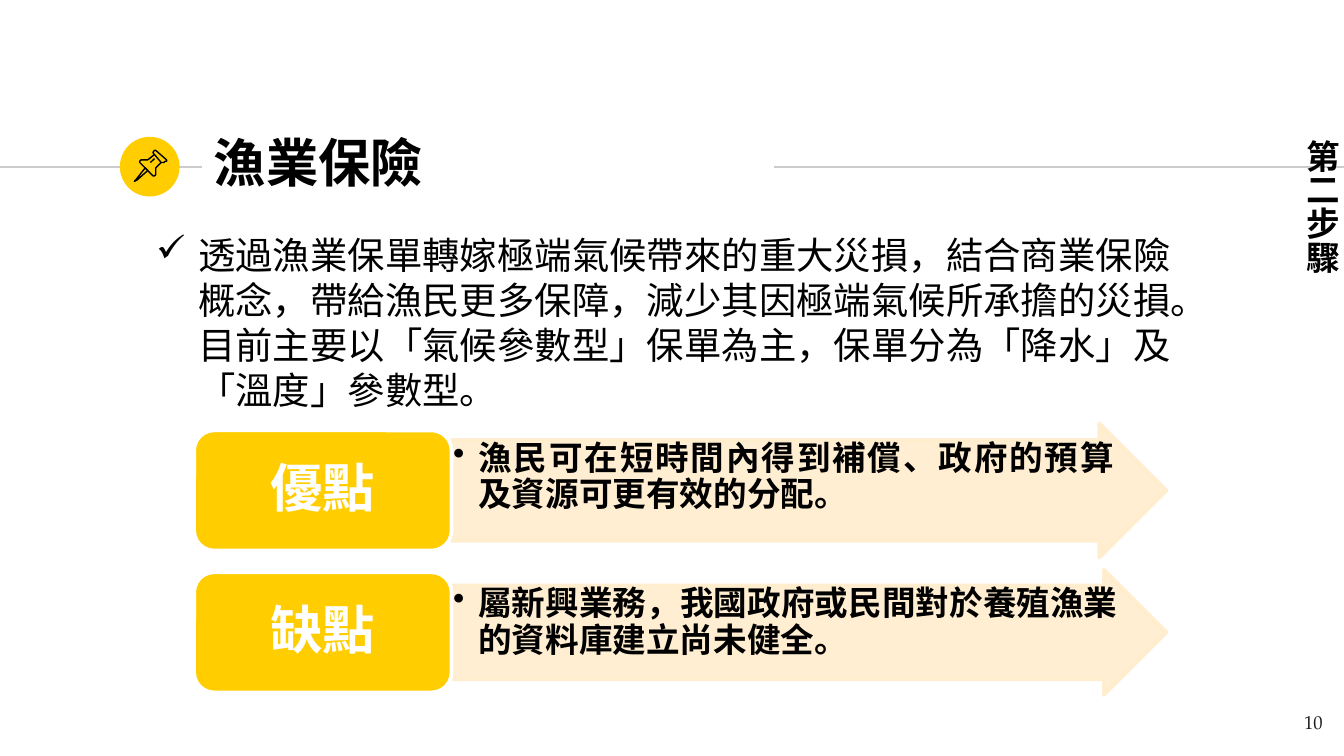
from lxml import etree
from pptx import Presentation
from pptx.dml.color import RGBColor
from pptx.enum.shapes import MSO_CONNECTOR, MSO_SHAPE
from pptx.enum.text import MSO_ANCHOR, MSO_AUTO_SIZE, PP_ALIGN
from pptx.oxml.ns import qn
from pptx.util import Pt

BLACK = RGBColor(0x00, 0x00, 0x00)
WHITE = RGBColor(0xFF, 0xFF, 0xFF)
YELLOW = RGBColor(0xFF, 0xCD, 0x00)
CREAM = RGBColor(0xFF, 0xED, 0xCC)
RULE_GRAY = RGBColor(0xCC, 0xCC, 0xCC)
NUMBER_GRAY = RGBColor(0x1D, 0x1D, 0x1B)

LEFT, CENTER = PP_ALIGN.LEFT, PP_ALIGN.CENTER
RIGHT, JUSTIFY = PP_ALIGN.RIGHT, PP_ALIGN.JUSTIFY
TOP, MIDDLE = MSO_ANCHOR.TOP, MSO_ANCHOR.MIDDLE
GROW, FIXED = MSO_AUTO_SIZE.SHAPE_TO_FIT_TEXT, MSO_AUTO_SIZE.NONE
OVAL, ROUNDED, ARROW = MSO_SHAPE.OVAL, MSO_SHAPE.ROUNDED_RECTANGLE, MSO_SHAPE.RIGHT_ARROW
STRAIGHT = MSO_CONNECTOR.STRAIGHT

FONT = "Noto Sans CJK JP"
POINT_FONT = "Noto Sans CJK SC"
NUMBER_FONT = "TeX Gyre Pagella"

BODY = (
    "透過漁業保單轉嫁極端氣候帶來的重大災損，結合商業保險概念，帶給漁民更多保障，"
    "減少其因極端氣候所承擔的災損。目前主要以「氣候參數型」保單為主，"
    "保單分為「降水」及「溫度」參數型。"
)
POINTS = [
    ("優點", "漁民可在短時間內得到補償、政府的預算及資源可更有效的分配。", 226.8, 72),
    ("缺點", "屬新興業務，我國政府或民間對於養殖漁業的資料庫建立尚未健全。", 305.3, 67),
]
PIN_UNIT = Pt(0.1)
PIN_OUTLINES = [
    ([(778, 900), (727, 965), (720, 972), (734, 965), (792, 914)], True),
    ([(828, 828), (864, 871), (878, 871), (886, 864), (893, 864), (893, 857),
      (835, 806), (828, 806), (821, 814), (821, 821)], True),
    ([(828, 828), (792, 857), (770, 857), (756, 857), (749, 864), (749, 871),
      (821, 943), (828, 943), (835, 936), (835, 900), (864, 871)], False),
    ([(806, 871), (828, 850)], False),
]


def set_bullet(paragraph, symbol, indent):
    properties = paragraph._p.get_or_add_pPr()
    properties.set("marL", str(Pt(indent)))
    properties.set("indent", str(-Pt(indent)))
    color = etree.SubElement(properties, qn("a:buClr"))
    etree.SubElement(color, qn("a:srgbClr"), val=str(BLACK))
    etree.SubElement(properties, qn("a:buChar"), char=symbol)


def write_text(shape, text, size, color=BLACK, bold=False, font=FONT, align=LEFT,
               anchor=TOP, insets=(7.2, 3.6), wrap=True, auto_size=FIXED,
               bullet=None, line_spacing=1.0):
    frame = shape.text_frame
    frame.word_wrap = wrap
    frame.auto_size = auto_size
    frame.vertical_anchor = anchor
    frame.margin_left = frame.margin_right = Pt(insets[0])
    frame.margin_top = frame.margin_bottom = Pt(insets[1])
    paragraph = frame.paragraphs[0]
    paragraph.text = text
    if bullet:
        set_bullet(paragraph, *bullet)
    paragraph.alignment = align
    paragraph.line_spacing = line_spacing
    paragraph.font.size = Pt(size)
    paragraph.font.bold = bold
    paragraph.font.color.rgb = color
    paragraph.font.name = font
    defaults = paragraph._p.pPr.find(qn("a:defRPr"))
    etree.SubElement(defaults, qn("a:ea"), typeface=font)


def add_text(slide, box, text, size, **style):
    shape = slide.shapes.add_textbox(*map(Pt, box))
    write_text(shape, text, size, **style)
    return shape


def add_title(slide, box, text):
    title = slide.shapes.title
    title.left, title.top, title.width, title.height = map(Pt, box)
    write_text(title, text, 28, bold=True, wrap=False, auto_size=GROW)


def add_filled(slide, kind, box, fill, line=None):
    shape = slide.shapes.add_shape(kind, *map(Pt, box))
    shape.shadow.inherit = False
    shape.fill.solid()
    shape.fill.fore_color.rgb = fill
    if line is None:
        shape.line.fill.background()
    else:
        shape.line.color.rgb = line
        shape.line.width = Pt(2)
    return shape


def set_opacity(shape, percent):
    for color in shape._element.spPr.iter(qn("a:srgbClr")):
        etree.SubElement(color, qn("a:alpha"), val=str(percent * 1000))


def add_rule(slide, start, end, y):
    rule = slide.shapes.add_connector(STRAIGHT, Pt(start), Pt(y), Pt(end), Pt(y))
    rule.line.color.rgb = RULE_GRAY
    rule.line.width = Pt(0.75)
    etree.SubElement(rule._element.spPr, qn("a:effectLst"))


def add_pin(slide):
    pin = slide.shapes.add_group_shape()
    for points, closed in PIN_OUTLINES:
        builder = pin.shapes.build_freeform(*points[0], scale=PIN_UNIT)
        builder.add_line_segments(points[1:], close=closed)
        outline = builder.convert_to_shape()
        outline.shadow.inherit = False
        outline.fill.background()
        outline.line.color.rgb = BLACK
        outline.line.width = Pt(0.75)


def add_point(slide, label, text, top, arrow_height):
    arrow = add_filled(slide, ARROW, (241.9, top, 383, arrow_height), CREAM, CREAM)
    arrow.adjustments[0] = 0.75
    arrow.adjustments[1] = 0.5
    set_opacity(arrow, 90)
    write_text(arrow, text, 18, bold=True, font=POINT_FONT, align=JUSTIFY,
               insets=(0.8, 0.8), bullet=("•", 13.5), line_spacing=0.9)
    label_height = 64.4
    label_top = top + (arrow_height - label_height) / 2
    tag = add_filled(slide, ROUNDED, (104, label_top, 137.9, label_height), YELLOW, WHITE)
    write_text(tag, label, 28, color=WHITE, bold=True, align=CENTER, anchor=MIDDLE,
               insets=(8.4, 4.2), line_spacing=0.9)


def main():
    presentation = Presentation()
    presentation.slide_width = Pt(720)
    presentation.slide_height = Pt(405)
    slide = presentation.slides.add_slide(presentation.slide_layouts[5])
    add_title(slide, (107.4, 66.4, 127.4, 41.2), "漁業保險")
    add_rule(slide, 0, 108, 89.4)
    add_filled(slide, OVAL, (64.2, 73.3, 32, 32), YELLOW)
    add_rule(slide, 414.7, 720, 89.4)
    add_pin(slide)
    add_text(slide, (672.5, 373.7, 43.2, 31), "10", 10, color=NUMBER_GRAY,
             font=NUMBER_FONT, align=RIGHT, insets=(7.2, 7.2))
    step = add_text(slide, (686.3, 67.8, 36.3, 78.7), "第二步驟", 18, bold=True,
                    wrap=False, auto_size=GROW)
    step.text_frame._txBody.bodyPr.set("vert", "eaVert")
    add_text(slide, (76.6, 121, 571.5, 104.2), BODY, 20, auto_size=GROW,
             bullet=("✓", 22.5))
    for point in POINTS:
        add_point(slide, *point)
    presentation.save("out.pptx")


if __name__ == "__main__":
    main()
